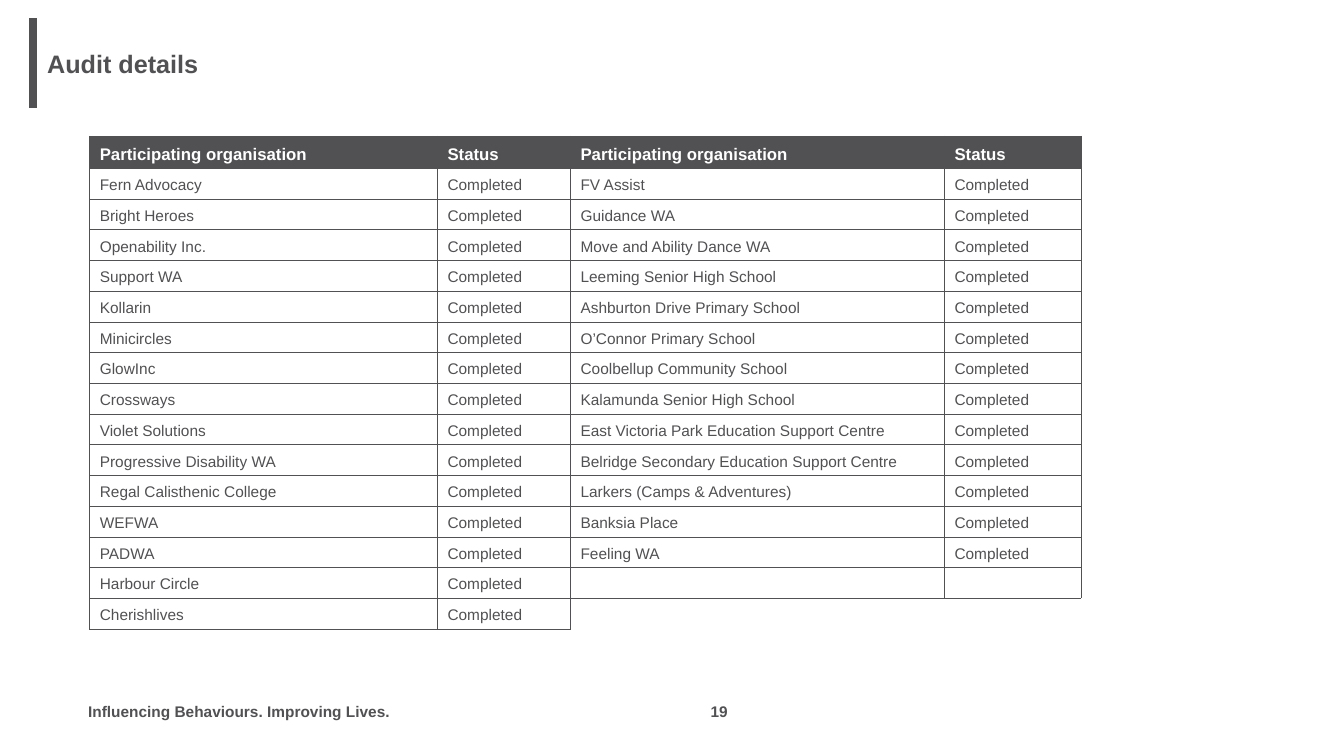
from dataclasses import dataclass

from lxml import etree
from pptx import Presentation
from pptx.dml.color import RGBColor
from pptx.enum.shapes import MSO_CONNECTOR
from pptx.enum.text import MSO_ANCHOR, PP_ALIGN
from pptx.oxml.ns import qn
from pptx.util import Emu, Inches, Pt

STRAIGHT = MSO_CONNECTOR.STRAIGHT
MIDDLE = MSO_ANCHOR.MIDDLE
LEFT, CENTER = PP_ALIGN.LEFT, PP_ALIGN.CENTER

GRID_COLUMNS, GRID_ROWS = 160, 90
SLIDE_WIDTH, SLIDE_HEIGHT = Inches(13.333), Inches(7.5)
BLANK_LAYOUT = 6


@dataclass(frozen=True)
class Theme:
    font: str = "Arial"
    ink: str = "515154"
    paper: str = "FFFFFF"
    title_size: int = 18
    header_size: int = 12
    body_size: int = 11
    border: float = 0.5
    hidden_border: float = 1
    accent: float = 6
    line_spacing: float = 1.2


THEME = Theme()


@dataclass(frozen=True)
class Label:
    """A text box; its place and size are in grid units."""
    text: str
    left: float
    top: float
    width: float
    height: float
    size: int = THEME.body_size
    inset: float = 0.04
    align: PP_ALIGN = LEFT
    line_spacing: float = THEME.line_spacing


@dataclass(frozen=True)
class Border:
    side: str
    color: str = THEME.ink
    width: float = THEME.border


LABELS = (
    Label("Influencing Behaviours. Improving Lives.", 10, 82.68, 47.4, 3.6),
    Label("Audit details", 4.44, 2.16, 125.52, 10.68,
          size=THEME.title_size, inset=0.1, line_spacing=1),
    Label("19", 82.08, 82.68, 7.08, 3.6, align=CENTER),
)
ACCENT_LEFT, ACCENT_TOP, ACCENT_BOTTOM = 3.96, 2.16, 12.84

TABLE_LEFT, TABLE_TOP = 10.68, 16.2
TABLE_COLUMNS = (41.4, 15.84, 44.52, 16.32)
HEADER_HEIGHT, ROW_HEIGHT = 3.84, 3.66

HEADINGS = ("Participating organisation", "Status") * 2
STATUS = "Completed"
LEFT_ORGANISATIONS = (
    "Fern Advocacy", "Bright Heroes", "Openability Inc.", "Support WA",
    "Kollarin", "Minicircles", "GlowInc", "Crossways", "Violet Solutions",
    "Progressive Disability WA", "Regal Calisthenic College", "WEFWA",
    "PADWA", "Harbour Circle", "Cherishlives",
)
RIGHT_ORGANISATIONS = (
    "FV Assist", "Guidance WA", "Move and Ability Dance WA",
    "Leeming Senior High School", "Ashburton Drive Primary School",
    "O’Connor Primary School", "Coolbellup Community School",
    "Kalamunda Senior High School",
    "East Victoria Park Education Support Centre",
    "Belridge Secondary Education Support Centre",
    "Larkers (Camps & Adventures)", "Banksia Place", "Feeling WA",
)

FULL_BORDERS = tuple(Border(side) for side in "LRTB")
CORNER_BORDERS = (Border("L"), Border("R", THEME.paper, THEME.hidden_border),
                  Border("T"))


def across(columns: float) -> Emu:
    return Emu(round(SLIDE_WIDTH * columns / GRID_COLUMNS))


def down(rows: float) -> Emu:
    return Emu(round(SLIDE_HEIGHT * rows / GRID_ROWS))


def style_paragraph(paragraph, size: int, color: str, bold: bool,
                    line_spacing: float = THEME.line_spacing) -> None:
    paragraph.line_spacing = line_spacing
    font = paragraph.font
    font.name, font.size, font.bold = THEME.font, Pt(size), bold
    font.color.rgb = RGBColor.from_string(color)


def add_label(page, label: Label) -> None:
    box = page.shapes.add_textbox(across(label.left), down(label.top),
                                  across(label.width), down(label.height))
    frame = box.text_frame
    frame.word_wrap = True
    frame.vertical_anchor = MIDDLE
    frame.margin_left = frame.margin_right = Inches(label.inset)
    frame.margin_top = frame.margin_bottom = Inches(0.04)
    paragraph = frame.paragraphs[0]
    paragraph.text = label.text
    paragraph.alignment = label.align
    style_paragraph(paragraph, label.size, THEME.ink, True, label.line_spacing)


def add_accent(page) -> None:
    line = page.shapes.add_connector(
        STRAIGHT, across(ACCENT_LEFT), down(ACCENT_TOP),
        across(ACCENT_LEFT), down(ACCENT_BOTTOM))
    line.line.color.rgb = RGBColor.from_string(THEME.ink)
    line.line.width = Pt(THEME.accent)
    etree.SubElement(line._element.spPr, qn("a:effectLst"))


def set_borders(cell, borders: tuple[Border, ...]) -> None:
    """Draw the given sides and leave the others empty; call before filling."""
    properties = cell._tc.get_or_add_tcPr()
    by_side = {border.side: border for border in borders}
    for side in "LRTB":
        line = etree.SubElement(properties, qn(f"a:ln{side}"))
        border = by_side.get(side)
        if border is None:
            etree.SubElement(line, qn("a:noFill"))
            continue
        line.set("w", str(Pt(border.width)))
        fill = etree.SubElement(line, qn("a:solidFill"))
        etree.SubElement(fill, qn("a:srgbClr"), val=border.color)


def fill_cell(cell, text: str, is_header: bool,
              borders: tuple[Border, ...]) -> None:
    set_borders(cell, borders)
    cell.margin_top, cell.margin_bottom = Inches(0.05), Inches(0.04)
    paragraph = cell.text_frame.paragraphs[0]
    size = THEME.header_size if is_header else THEME.body_size
    if text:
        paragraph.text = text
    style_paragraph(paragraph, size, THEME.paper if is_header else THEME.ink,
                    is_header)
    if not text:
        etree.SubElement(paragraph._p, qn("a:endParaRPr"), sz=str(size * 100))
    if is_header:
        cell.fill.solid()
        cell.fill.fore_color.rgb = RGBColor.from_string(THEME.ink)
    else:
        cell.fill.background()


def organisation_cells(names: tuple[str, ...], index: int) -> tuple[str, str]:
    return (names[index], STATUS) if index < len(names) else ("", "")


def add_audit_table(page) -> None:
    records = [HEADINGS] + [
        organisation_cells(LEFT_ORGANISATIONS, index)
        + organisation_cells(RIGHT_ORGANISATIONS, index)
        for index in range(len(LEFT_ORGANISATIONS))]
    last = len(records) - 1
    table = page.shapes.add_table(
        len(records), len(TABLE_COLUMNS), across(TABLE_LEFT), down(TABLE_TOP),
        across(sum(TABLE_COLUMNS)),
        down(HEADER_HEIGHT + last * ROW_HEIGHT)).table
    table.first_row = table.horz_banding = False
    for column, width in zip(table.columns, TABLE_COLUMNS):
        column.width = across(width)
    for row_index, record in enumerate(records):
        is_header = row_index == 0
        table.rows[row_index].height = down(
            HEADER_HEIGHT if is_header else ROW_HEIGHT)
        for column_index, text in enumerate(record):
            is_corner = row_index == last and column_index >= 2
            fill_cell(table.cell(row_index, column_index), text, is_header,
                      CORNER_BORDERS if is_corner else FULL_BORDERS)
    table.cell(last, 2).merge(table.cell(last, 3))


def main() -> None:
    deck = Presentation()
    deck.slide_width, deck.slide_height = SLIDE_WIDTH, SLIDE_HEIGHT
    page = deck.slides.add_slide(deck.slide_layouts[BLANK_LAYOUT])
    add_audit_table(page)
    add_accent(page)
    for label in LABELS:
        add_label(page, label)
    deck.save("out.pptx")


if __name__ == "__main__":
    main()
